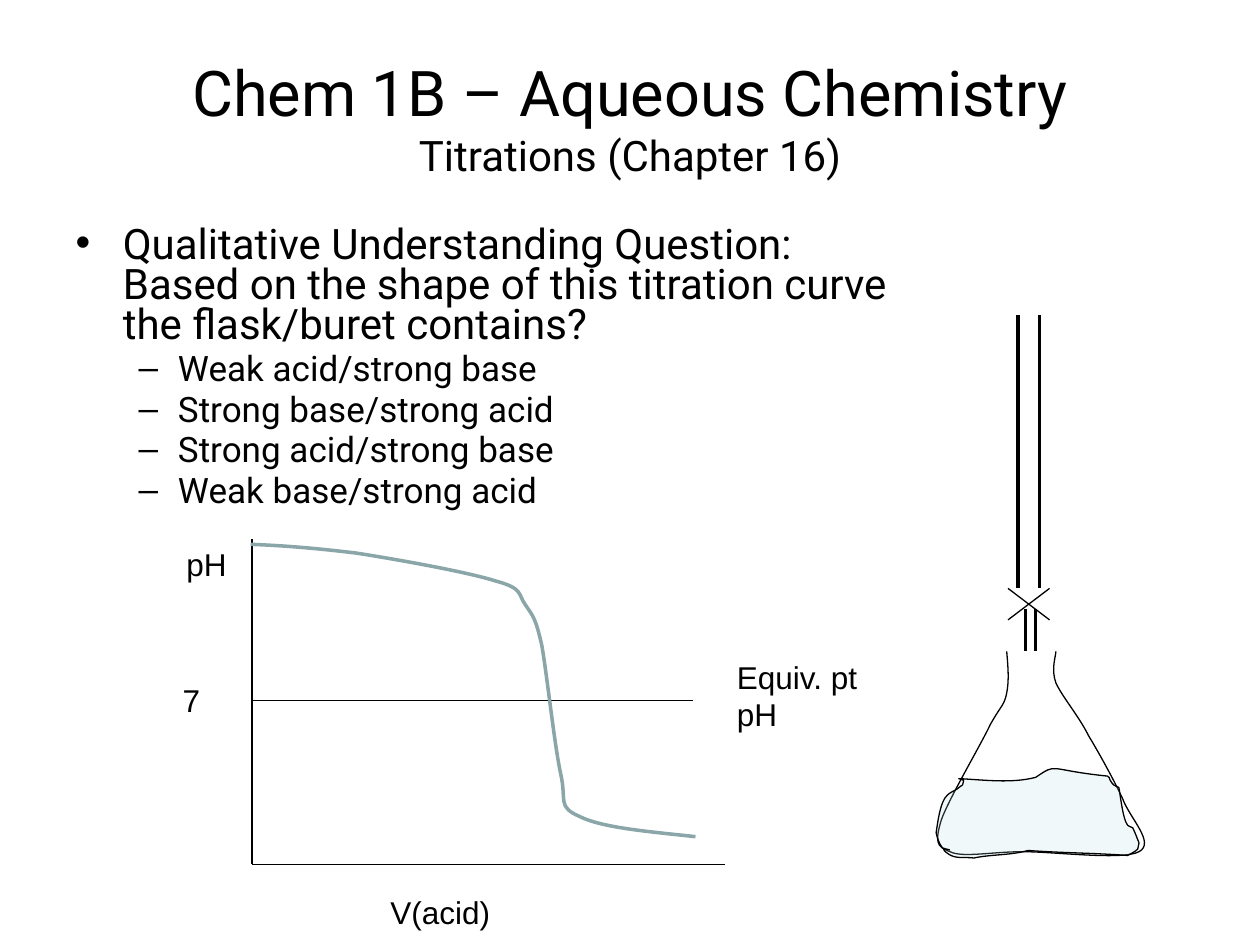
"""Build a slide on titration curves with a plot, a buret and a flask."""
import pptx
import pptx.dml.color
import pptx.enum.shapes
import pptx.enum.text
import pptx.oxml.ns
import pptx.util
from lxml import etree

SCALE = 9144
BLACK = pptx.dml.color.RGBColor(0x00, 0x00, 0x00)
TEAL = pptx.dml.color.RGBColor(0x8A, 0xA6, 0xA8)
WATER = pptx.dml.color.RGBColor(0xBB, 0xE0, 0xE3)
THIN, THICK = 0.75, 2

CHOICES = ["Weak acid/strong base", "Strong base/strong acid",
           "Strong acid/strong base", "Weak base/strong acid"]

FLASK = [
    (799, 517), (800, 529), (801, 540), (799, 550), (797, 560), (795, 559),
    (786, 575), (778, 592), (753, 634), (747, 651), (742, 668), (743, 672),
    (754, 676), (764, 681), (787, 676), (812, 676), (837, 676), (891, 683),
    (904, 676), (917, 669), (897, 650), (891, 634), (884, 619), (873, 599),
    (864, 584), (856, 568), (843, 553), (838, 542), (834, 531), (838, 521),
    (838, 517)]
LIQUID = [
    (761, 618), (781, 619), (803, 622), (822, 617), (840, 605), (830, 611),
    (879, 616), (881, 616), (880, 618), (881, 619), (884, 624), (884, 623),
    (888, 625), (889, 629), (891, 650), (895, 655), (896, 656), (897, 656),
    (899, 657), (901, 661), (902, 664), (904, 669), (903, 670), (904, 673),
    (903, 674), (901, 676), (895, 679), (895, 679), (868, 677), (842, 677),
    (816, 675), (802, 679), (787, 678), (773, 681), (766, 680), (759, 682),
    (753, 678), (740, 669), (764, 678), (748, 673), (745, 669), (744, 665),
    (743, 661), (744, 655), (746, 636), (752, 631), (754, 629), (757, 628),
    (760, 626), (761, 625), (764, 623), (764, 623), (765, 618), (766, 620),
    (761, 618)]
CURVE = [
    (199, 432), (225, 433), (250, 435), (283, 439), (315, 444), (371, 454),
    (393, 461), (416, 467), (411, 472), (417, 480), (423, 489), (425, 490),
    (430, 512), (434, 534), (440, 591), (445, 614), (450, 636), (442, 640),
    (460, 648), (478, 657), (515, 660), (552, 664)]


def px(num):
    """Turn px into EMU."""
    return pptx.util.Emu(num * SCALE)


def place(shape, left, top, width, height):
    """Move and size a shape."""
    shape.left, shape.top = px(left), px(top)
    shape.width, shape.height = px(width), px(height)


def add_run(para, text, size, font):
    """Add one black run to a paragraph."""
    run = para.add_run()
    run.text = text
    run.font.size = pptx.util.Pt(size)
    run.font.name = font
    run.font.color.rgb = BLACK


def add_title(slide):
    """Fill the title with a heading and a smaller second line."""
    title = slide.shapes.title
    place(title, 50, 30, 900, 125)
    frame = title.text_frame
    frame.auto_size = pptx.enum.text.MSO_AUTO_SIZE.NONE
    frame.vertical_anchor = pptx.enum.text.MSO_ANCHOR.MIDDLE
    para = frame.paragraphs[0]
    para.alignment = pptx.enum.text.PP_ALIGN.CENTER
    add_run(para, "Chem 1B – Aqueous Chemistry", 36, "Roboto")
    para.add_line_break()
    add_run(para, "Titrations (Chapter 16)", 24, "Roboto")


def add_body(slide):
    """Fill the body with the question and its choices."""
    body = slide.placeholders[1]
    place(body, 50, 175, 667, 292)
    frame = body.text_frame
    frame.auto_size = pptx.enum.text.MSO_AUTO_SIZE.NONE
    para = frame.paragraphs[0]
    para.line_spacing = 0.8
    add_run(para, "Qualitative Understanding Question:  Based on the shape of "
            "this titration curve the flask/buret contains?", 24, "Roboto")
    for choice in CHOICES:
        para = frame.add_paragraph()
        para.level = 1
        para.line_spacing = 0.8
        add_run(para, choice, 20, "Roboto")


def add_label(slide, box, *lines):
    """Add a text box with one paragraph for each line."""
    frame = slide.shapes.add_textbox(*map(px, box)).text_frame
    frame.word_wrap = True
    for num, text in enumerate(lines):
        para = frame.add_paragraph() if num else frame.paragraphs[0]
        add_run(para, text, 18, "Arial")


def add_line(slide, start, end, width=THIN):
    """Draw a straight black line."""
    kind = pptx.enum.shapes.MSO_CONNECTOR.STRAIGHT
    line = slide.shapes.add_connector(kind, *map(px, start + end))
    line.line.color.rgb = BLACK
    line.line.width = pptx.util.Pt(width)
    props = line._element.spPr
    etree.SubElement(props, pptx.oxml.ns.qn("a:effectLst"))


def bend(shape):
    """Turn each three straight segments of an outline into one cubic curve."""
    legs = list(shape._element.iter(pptx.oxml.ns.qn("a:lnTo")))
    for num in range(0, len(legs), 3):
        arc = etree.Element(pptx.oxml.ns.qn("a:cubicBezTo"))
        legs[num].addprevious(arc)
        for leg in legs[num:num + 3]:
            arc.append(leg[0])
            leg.getparent().remove(leg)


def add_curve(slide, knots, color=BLACK, width=THIN, fill=None):
    """Draw a smooth outline, closed and lightly tinted if it has a fill."""
    first, *rest = knots
    pen = slide.shapes.build_freeform(*first, scale=SCALE)
    pen.add_line_segments(rest, close=fill is not None)
    shape = pen.convert_to_shape()
    bend(shape)
    shape.shadow.inherit = False
    shape.line.color.rgb = color
    shape.line.width = pptx.util.Pt(width)
    if fill is None:
        shape.fill.background()
        return
    shape.fill.solid()
    shape.fill.fore_color.rgb = fill
    tint = shape._element.spPr.find(".//" + pptx.oxml.ns.qn("a:srgbClr"))
    etree.SubElement(tint, pptx.oxml.ns.qn("a:alpha"), val="20000")


def add_buret(slide):
    """Draw the tube, the valve and the tip above the flask."""
    for x in (808, 825):
        add_line(slide, (x, 250), (x, 467), THICK)
    add_line(slide, (800, 467), (833, 492))
    add_line(slide, (800, 492), (833, 467))
    for x in (814, 822):
        add_line(slide, (x, 483), (x, 517), THICK)


def add_plot(slide):
    """Draw the axes, the neutral line, the labels and the curve."""
    add_line(slide, (200, 428), (200, 686))
    add_line(slide, (200, 686), (575, 686))
    add_label(slide, (138, 428, 58, 40), "pH")
    add_label(slide, (300, 704, 233, 40), "V(acid)")
    add_line(slide, (200, 556), (550, 556))
    add_label(slide, (135, 536, 58, 40), "7")
    add_curve(slide, CURVE, TEAL, THICK)
    add_label(slide, (575, 517, 133, 71), "Equiv. pt", "pH")


def main():
    """Build and save the slide."""
    deck = pptx.Presentation()
    deck.slide_width, deck.slide_height = px(1000), px(750)
    slide = deck.slides.add_slide(deck.slide_layouts[1])
    add_title(slide)
    add_body(slide)
    add_curve(slide, FLASK)
    add_buret(slide)
    add_curve(slide, LIQUID, fill=WATER)
    add_plot(slide)
    deck.save("out.pptx")


if __name__ == "__main__":
    main()
